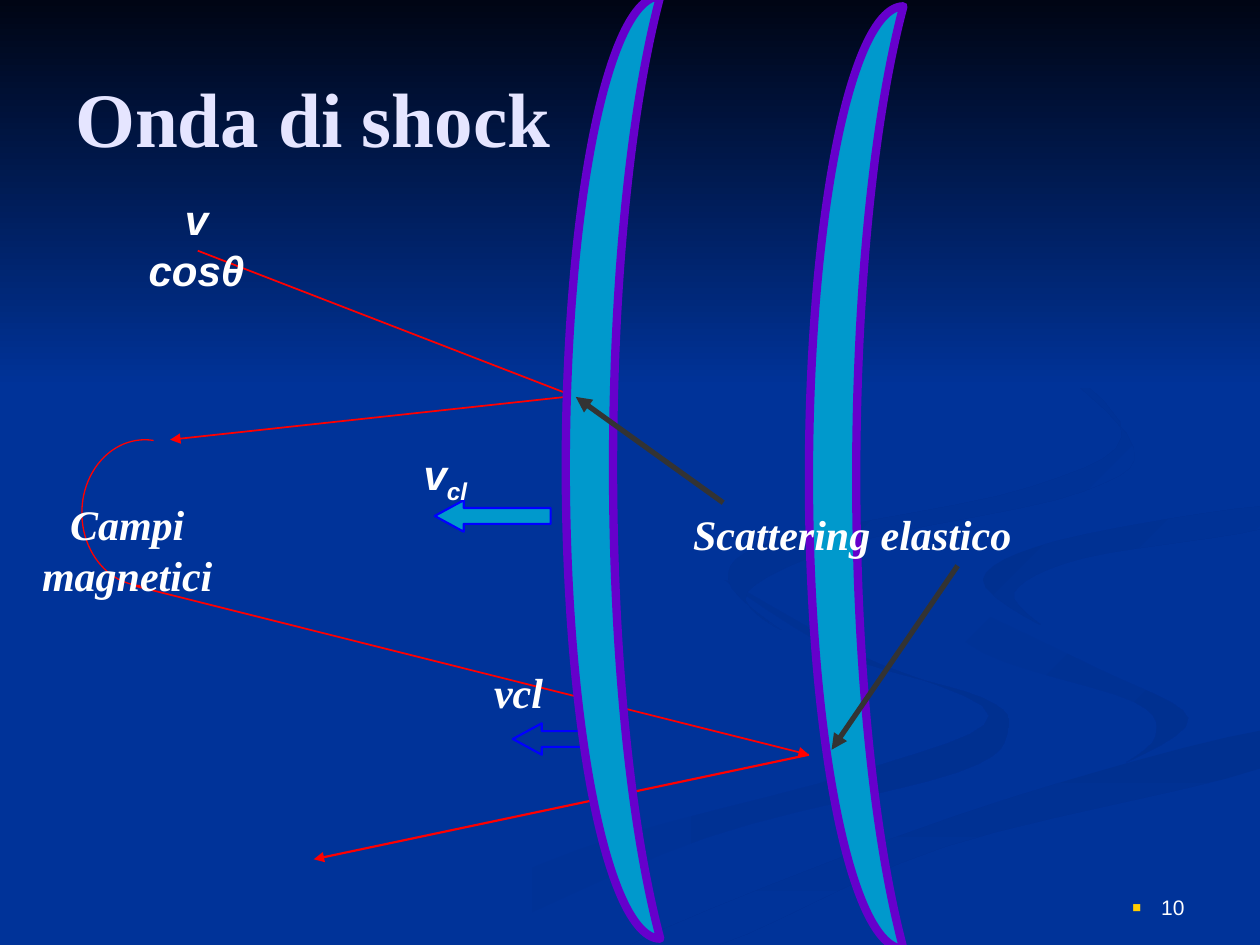
from math import cos, radians, sin
from lxml.etree import SubElement
from pptx import Presentation
from pptx.dml.color import RGBColor as Color
from pptx.enum.shapes import MSO_CONNECTOR as Link, MSO_SHAPE as Preset
from pptx.enum.text import MSO_ANCHOR as Anchor, PP_ALIGN as Align
from pptx.oxml.ns import qn
from pptx.util import Inches, Pt

theme = {
    "ground": "003399", "night": "000514", "swirl": "003090", "title": "E5E5FF",
    "text": "FFFFFF", "ray": "FF0000", "pointer": "333333", "front": "0099CC",
    "rim": "6600CC", "arrow": "0000FF", "bullet": "FFCC00",
    "serif": "Times New Roman", "sans": "Arial",
    "title_size": Pt(44), "label_size": Pt(24), "number_size": Pt(12),
}

deck = Presentation()
deck.slide_width, deck.slide_height = Inches(10), Inches(7.5)
COL, ROW = deck.slide_width / 100, deck.slide_height / 75
page = deck.slides.add_slide(deck.slide_layouts[6])
page.background.fill.solid()
page.background.fill.fore_color.rgb = Color.from_string(theme["ground"])


def outline(points, closed=True):
    corners = [(x * COL, y * ROW) for x, y in points]
    builder = page.shapes.build_freeform(*corners[0])
    builder.add_line_segments(corners[1:], close=closed)
    shape = builder.convert_to_shape()
    shape.shadow.inherit = False
    return shape


def write(words, grid, font, size, tone, **formats):
    left, top, width, height = grid
    box = page.shapes.add_textbox(int(left * COL), int(top * ROW), int(width * COL), int(height * ROW))
    box.text_frame.word_wrap = True
    para = box.text_frame.paragraphs[0]
    for part in words:
        span = para.add_run()
        span.text = part
        for name, value in {"name": theme[font], "size": theme[size], **formats}.items():
            setattr(span.font, name, value)
        span.font.color.rgb = Color.from_string(theme[tone])
    return box


swirls = [
    (0, [(78, 55.4), (67, 52), (57.5, 46), (68, 51.9), (78.5, 56.8), (68, 61.3),
         (46, 67.4), (30, 75), (36, 75), (56, 66.5), (76, 61.3), (80, 58)]),
    (45, [(94.3, 57), (87, 53), (72.4, 46.4), (78, 51.8), (90, 55.7), (91.7, 58.5), (89.4, 60.5)]),
    (90, [(50, 75), (57, 75), (75, 67.2), (100, 61), (100, 58), (76, 64.7)]),
    (45, [(78, 46), (82.6, 49.6), (80.5, 47), (86, 44.3), (100, 42), (100, 40.2), (84, 42.9)]),
    (45, [(68, 43), (86, 39), (89.4, 34.4), (76, 23), (88.9, 33.5), (82, 38.6),
          (62, 42.8), (57.8, 46), (62, 50), (59.3, 47)]),
]
STEPS = 6
bands = []
for angle, knots in swirls:
    curve = []
    for index in range(len(knots)):
        before, start, end, after = [knots[(index + shift) % len(knots)] for shift in (-1, 0, 1, 2)]
        for step in range(STEPS):
            t = step / STEPS
            curve.append([min(edge, b + ((c - a) + (2 * a - 5 * b + 4 * c - d) * t
                                         + (3 * b - a - 3 * c + d) * t * t) * t / 2)
                          for a, b, c, d, edge in zip(before, start, end, after, (100, 75))])
    tones = ("ground", "swirl") if angle == 0 or len(knots) == 7 and knots[0][0] > 90 else ("swirl", "ground")
    bands.append((tones, angle, curve))
bands.append((("night", "ground"), 90, [(0, 0), (0, 30.8), (100, 30.8), (100, 0)]))

for tones, angle, points in bands:
    band = outline(points)
    band.line.fill.background()
    band.fill.gradient()
    band.fill.gradient_angle = 360 - angle
    for stop, tone in zip(band.fill.gradient_stops, tones):
        stop.color.rgb = Color.from_string(theme[tone])

arc = outline([(11.5 + 5 * cos(radians(turn)), 40.7 + 5.8 * sin(radians(turn)))
               for turn in range(278, 93, -4)], closed=False)
arc.fill.background()
arc.line.color.rgb = Color.from_string(theme["ray"])
arc.line.width = Pt(0.75)

arrow_style = (Preset.LEFT_ARROW, (9.2, 2.5), "arrow", 1.25)
moon_style = (Preset.MOON, (7.5, 74.8), "rim", 4.75)
presets = [
    (arrow_style, (34.5, 39.7), "front"),
    (arrow_style, (40.7, 57.4), None),
    (moon_style, (44.9, -0.3), "front"),
    (moon_style, (64.2, 0.5), "front"),
]
hit, bounce = (45.7, 31.5), (64.2, 59.9)
rays = [
    ((15.7, 19.9), hit, "ray", 1),
    ((44.9, 31.5), (13.5, 34.9), "ray", 1),
    ((10.7, 46.5), bounce, "ray", 1),
    (bounce, (24.9, 68.2), "ray", 1.25),
]
pointers = [
    ((57.4, 39.9), hit, "pointer", 3),
    ((76, 44.9), (66, 59.5), "pointer", 3),
]
for item in rays + presets + pointers:
    if item in presets:
        (kind, (width, height), line, weight), (left, top), fill = item
        shape = page.shapes.add_shape(kind, int(left * COL), int(top * ROW), int(width * COL), int(height * ROW))
        shape.shadow.inherit = False
        if kind == Preset.LEFT_ARROW:
            shape.adjustments[1] = 0.92
        if fill:
            shape.fill.solid()
            shape.fill.fore_color.rgb = Color.from_string(theme[fill])
        else:
            shape.fill.background()
    else:
        start, end, line, weight = item
        shape = page.shapes.add_connector(Link.STRAIGHT, int(start[0] * COL), int(start[1] * ROW),
                                          int(end[0] * COL), int(end[1] * ROW))
    shape.line.color.rgb = Color.from_string(theme[line])
    shape.line.width = Pt(weight)
    if item not in presets:
        SubElement(shape.line._get_or_add_ln(), qn("a:tailEnd"), type="triangle")
        SubElement(shape._element.spPr, qn("a:effectLst"))

heading = write(["Onda di shock"], (5, 3, 90, 12.5), "serif", "title_size", "title", bold=True)
heading.text_frame.vertical_anchor = Anchor.MIDDLE

labels = [
    (["v", "cl"], (32.5, 35.1, 5.7, 5), "sans"),
    (["vcl"], (38.2, 52.4, 5.9, 5), "serif"),
    (["v cosθ"], (10.7, 14.9, 9.8, 9), "sans"),
    (["Campi magnetici"], (0.1, 39.1, 20, 9), "serif"),
    (["Scattering elastico"], (54, 39.9, 27.3, 5), "serif"),
]
for words, grid, font in labels:
    label = write(words, grid, font, "label_size", "text", bold=True, italic=True)
    label.text_frame.word_wrap = grid[3] > 5
    para = label.text_frame.paragraphs[0]
    para.alignment = Align.CENTER
    for span in para.runs[1:]:
        span._r.get_or_add_rPr().set("baseline", "-25000")

number = write(["10"], (71.7, 68.3, 23.3, 5.2), "sans", "number_size", "text")
number.text_frame.vertical_anchor = Anchor.BOTTOM
para = number.text_frame.paragraphs[0]
para.alignment = Align.RIGHT
layout = para._p.get_or_add_pPr()
layout.set("marL", str(Inches(0.23)))
layout.set("indent", str(-Inches(0.23)))
SubElement(SubElement(layout, qn("a:buClr")), qn("a:srgbClr"), val=theme["bullet"])
SubElement(layout, qn("a:buSzPct"), val="70000")
SubElement(layout, qn("a:buFont"), typeface=theme["sans"])
SubElement(layout, qn("a:buChar"), char="■")

deck.save("out.pptx")
